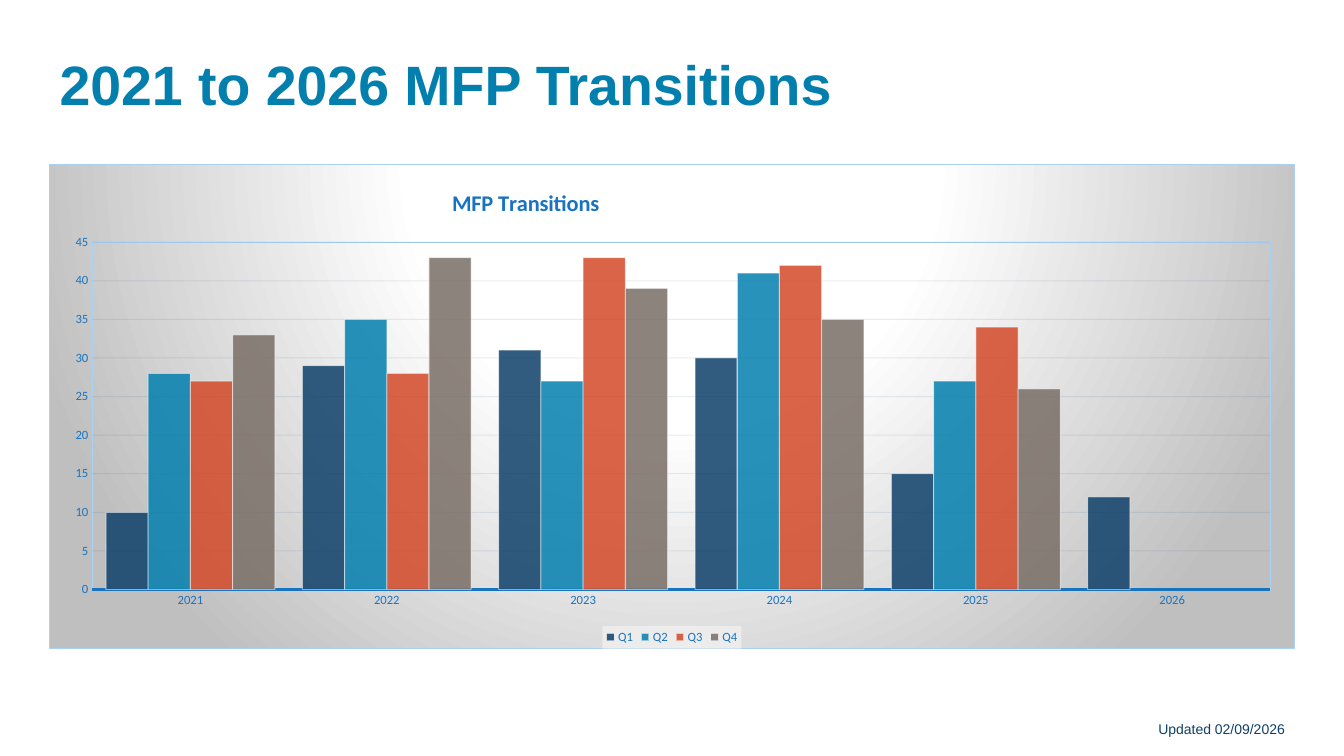
import pptx
import pptx.chart.data
import pptx.dml.color
import pptx.enum.chart
import pptx.enum.text
import pptx.oxml
import pptx.oxml.ns
import pptx.util
from pptx.util import Inches, Pt

RGBColor = pptx.dml.color.RGBColor
NAVY = RGBColor(0x0E, 0x40, 0x6A)
TEAL = RGBColor(0x03, 0x7F, 0xAE)
ORANGE = RGBColor(0xD3, 0x49, 0x27)
TAUPE = RGBColor(0x79, 0x6E, 0x66)
BLUE = RGBColor(0x19, 0x74, 0xC0)
GRID = RGBColor(0x10, 0x4A, 0x7B)
PALE_BLUE = RGBColor(0xA9, 0xD1, 0xF4)
WHITE = RGBColor(0xFF, 0xFF, 0xFF)
SILVER = RGBColor(0xBF, 0xBF, 0xBF)
LIGHT = RGBColor(0xF2, 0xF2, 0xF2)

YEARS = ["2021", "2022", "2023", "2024", "2025", "2026"]
QUARTERS = {
    "Q1": (NAVY, [10, 29, 31, 30, 15, 12]),
    "Q2": (TEAL, [28, 35, 27, 41, 27, None]),
    "Q3": (ORANGE, [27, 28, 43, 42, 34, None]),
    "Q4": (TAUPE, [33, 43, 39, 35, 26, None]),
}
TICK_FONT = {"name": "Calibri", "size": Pt(9), "bold": False}
qn = pptx.oxml.ns.qn


def apply_format(target, formats, color=None):
    for key, value in formats.items():
        setattr(target, key, value)
    if color is not None:
        target.color.rgb = color


def set_alphas(element, *percents):
    for color, percent in zip(element.iter(qn("a:srgbClr")), percents):
        color.append(pptx.oxml.parse_xml(
            f'<a:alpha {pptx.oxml.ns.nsdecls("a")} val="{percent * 1000}"/>'))


def shape_properties(content):
    return pptx.oxml.parse_xml(
        f'<c:spPr {pptx.oxml.ns.nsdecls("c", "a")}>{content}</c:spPr>')


def border(color):
    return f'<a:ln w="9525"><a:solidFill><a:srgbClr val="{color}"/></a:solidFill></a:ln>'


def set_layout(parent, index, values, inner=False):
    for old in parent.findall(qn("c:layout")):
        parent.remove(old)
    target = '<c:layoutTarget val="inner"/>' if inner else ""
    modes = "".join(f'<c:{axis}Mode val="edge"/>' for axis in "xy")
    sizes = "".join(f'<c:{key} val="{value}"/>' for key, value in values.items())
    parent.insert(index, pptx.oxml.parse_xml(
        f'<c:layout {pptx.oxml.ns.nsdecls("c")}><c:manualLayout>'
        f"{target}{modes}{sizes}</c:manualLayout></c:layout>"))


def place_heading(slide, left, top, width, height):
    heading = slide.shapes.title
    apply_format(heading, {"left": left, "top": top, "width": width, "height": height})
    frame = heading.text_frame
    frame.text = "2021 to 2026 MFP Transitions"
    apply_format(frame, {"vertical_anchor": pptx.enum.text.MSO_ANCHOR.MIDDLE,
                         "auto_size": pptx.enum.text.MSO_AUTO_SIZE.NONE,
                         "word_wrap": True})
    line = frame.paragraphs[0]
    apply_format(line, {"alignment": pptx.enum.text.PP_ALIGN.LEFT, "line_spacing": 0.9})
    apply_format(line.runs[0].font, {"name": "Arial", "size": Pt(39.6), "bold": True}, TEAL)


def place_update_note(slide, left, top, width, height):
    frame = slide.shapes.add_textbox(left, top, width, height).text_frame
    frame.text = "Updated 02/09/2026"
    frame.word_wrap = False
    apply_format(frame.paragraphs[0].runs[0].font, {"name": "Arial", "size": Pt(10)}, NAVY)


def style_axes(chart):
    years, counts = chart.category_axis, chart.value_axis
    no_ticks = pptx.enum.chart.XL_TICK_MARK.NONE
    for axis in (years, counts):
        apply_format(axis, {"major_tick_mark": no_ticks, "minor_tick_mark": no_ticks})
        apply_format(axis.tick_labels.font, TICK_FONT, BLUE)
    apply_format(years.format.line, {"width": Pt(1.5)}, BLUE)
    years.has_major_gridlines = False
    apply_format(counts, {"minimum_scale": 0, "maximum_scale": 45, "major_unit": 5,
                          "has_major_gridlines": True})
    counts.format.line.fill.background()
    gridline = counts.major_gridlines.format.line
    apply_format(gridline, {"width": Pt(0.75)}, GRID)
    set_alphas(counts._element.find(qn("c:majorGridlines")), 10)


def style_bars(chart):
    plot = chart.plots[0]
    apply_format(plot, {"gap_width": 65, "overlap": 0, "vary_by_categories": False})
    for quarter in plot.series:
        quarter.invert_if_negative = False
        fill = quarter.format.fill
        fill.solid()
        fill.fore_color.rgb = QUARTERS[quarter.name][0]
        apply_format(quarter.format.line, {"width": Pt(0.75)}, WHITE)
        set_alphas(quarter._element.find(qn("c:spPr")), 85, 50)


def style_surroundings(chart):
    chart.has_title = True
    caption = chart.chart_title.text_frame
    caption.text = "MFP Transitions"
    apply_format(caption.paragraphs[0].runs[0].font,
                 {"name": "Calibri", "size": Pt(16), "bold": True}, BLUE)
    set_layout(chart.chart_title._element, 1, {"x": 0.32, "y": 0.04})

    chart.has_legend = True
    legend = chart.legend
    apply_format(legend, {"position": pptx.enum.chart.XL_LEGEND_POSITION.BOTTOM,
                          "include_in_layout": False})
    apply_format(legend.font, TICK_FONT, BLUE)
    legend_fill = shape_properties(
        f'<a:solidFill><a:srgbClr val="{LIGHT}"/></a:solidFill>')
    set_alphas(legend_fill, 75)
    legend._element.find(qn("c:overlay")).addnext(legend_fill)

    space = chart._chartSpace
    plot_area = space.chart.plotArea
    set_layout(plot_area, 0, {"x": 0.034, "y": 0.16, "w": 0.947, "h": 0.718}, inner=True)
    plot_area.append(shape_properties("<a:noFill/>" + border(PALE_BLUE)))
    stops = "".join(
        f'<a:gs pos="{percent * 1000}"><a:srgbClr val="{color}"/></a:gs>'
        for percent, color in ((0, WHITE), (39, WHITE), (100, SILVER)))
    space.chart.addnext(shape_properties(
        f'<a:gradFill><a:gsLst>{stops}</a:gsLst><a:path path="circle">'
        '<a:fillToRect l="50000" t="-80000" r="50000" b="180000"/></a:path></a:gradFill>'
        + border(PALE_BLUE)))


def place_transitions_chart(slide, left, top, width, height):
    data = pptx.chart.data.CategoryChartData()
    data.categories = YEARS
    for quarter, (_, counts) in QUARTERS.items():
        data.add_series(quarter, counts)
    chart = slide.shapes.add_chart(
        pptx.enum.chart.XL_CHART_TYPE.COLUMN_CLUSTERED,
        left, top, width, height, data).chart
    apply_format(chart.font, {"name": "Calibri", "size": Pt(10)}, NAVY)
    style_axes(chart)
    style_bars(chart)
    style_surroundings(chart)


def main():
    deck = pptx.Presentation()
    apply_format(deck, {"slide_width": Inches(13.33), "slide_height": Inches(7.5)})
    slide = deck.slides.add_slide(deck.slide_layouts.get_by_name("Title Only"))
    margin, width = Inches(0.49), Inches(12.35)
    place_heading(slide, margin, Inches(0.57), width, Inches(0.6))
    place_transitions_chart(slide, margin, Inches(1.63), width, Inches(4.81))
    place_update_note(slide, Inches(11.39), Inches(7.1), Inches(1.46), Inches(0.27))
    deck.save("out.pptx")


if __name__ == "__main__":
    main()
